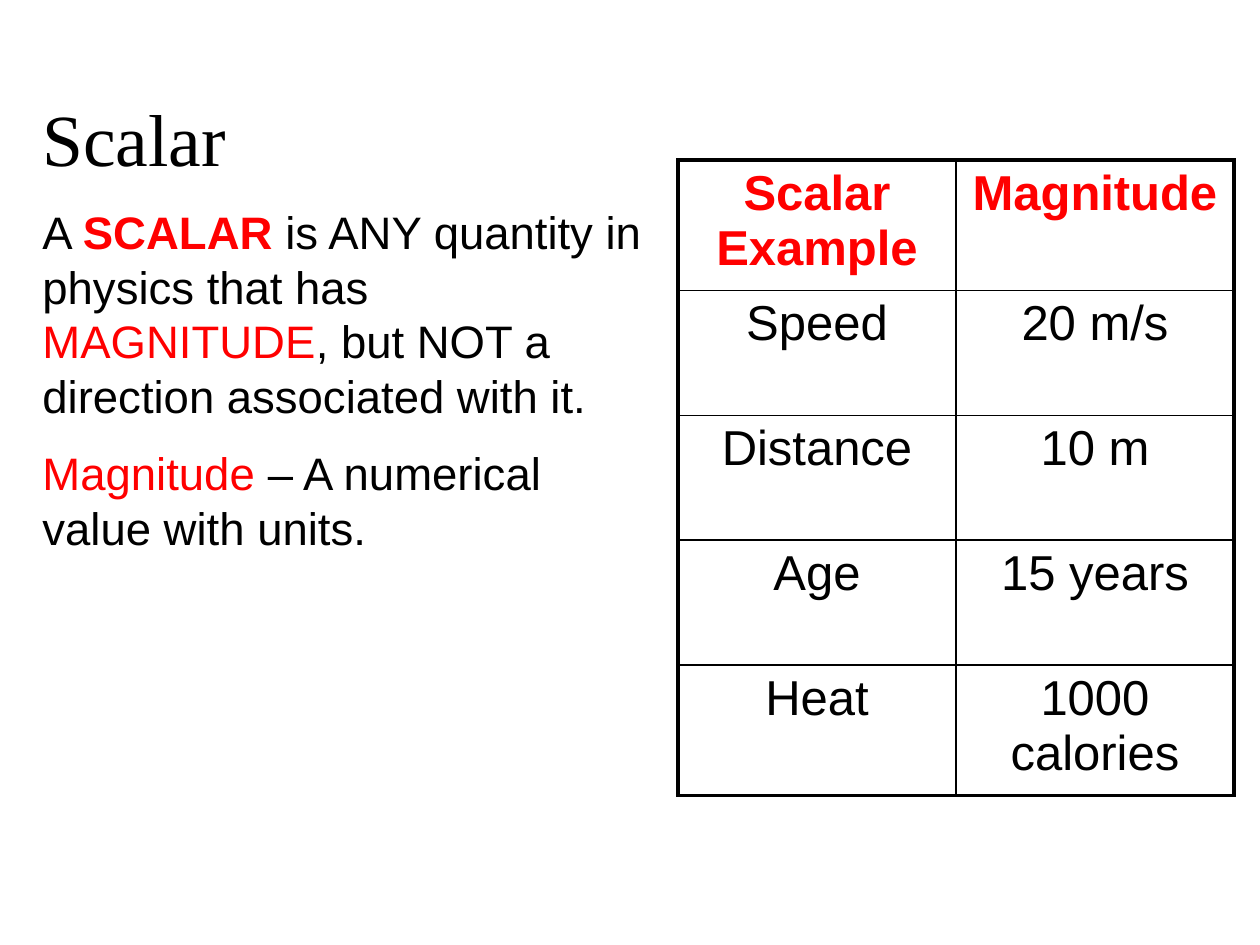
from pptx import Presentation
from pptx.dml.color import RGBColor
from pptx.enum.text import PP_ALIGN
from pptx.oxml import parse_xml
from pptx.oxml.ns import nsdecls
from pptx.util import Emu, Pt

PX = 914400 // 126

THEME = {
    "ink": "000000",
    "accent": "FF0000",
    "heading_font": "Times New Roman",
    "body_font": "Arial",
    "heading": 42,
    "body": 26,
    "cell": 28,
    "paragraph_gap": 13,
    "thick": 2.25,
    "thin": 1,
}

HEADING = "Scalar"
# Each run: text, colour, bold
DEFINITIONS = [
    [("A ", "ink", False), ("SCALAR", "accent", True),
     (" is ANY quantity in physics that has ", "ink", False),
     ("MAGNITUDE", "accent", False),
     (", but NOT a direction associated with it.", "ink", False)],
    [("Magnitude", "accent", False),
     (" – A numerical value with units.", "ink", False)],
]
EXAMPLES = [
    ("Scalar Example", "Magnitude"),
    ("Speed", "20 m/s"),
    ("Distance", "10 m"),
    ("Age", "15 years"),
    ("Heat", "1000 calories"),
]
TEXT_BOX = (30, 87, 628, 484)
TABLE_LEFT, TABLE_TOP, COLUMN_WIDTH = 678, 160, 278
ROW_HEIGHTS = [130, 125, 125, 125, 130]


def px(n):
    return Emu(n * PX)


def format_run(r, font, size, color="ink", bold=False):
    r.font.name = THEME[font]
    r.font.size = Pt(THEME[size])
    r.font.bold = bold
    r.font.color.rgb = RGBColor.from_string(THEME[color])


def set_borders(cell, outer):
    """Draw all four sides, thick on the sides named in outer."""
    tc_pr = cell._tc.get_or_add_tcPr()
    for i, side in enumerate("LRTB"):
        width = Pt(THEME["thick" if side in outer else "thin"])
        tc_pr.insert(i, parse_xml(
            f'<a:ln{side} {nsdecls("a")} w="{width}"><a:solidFill>'
            f'<a:srgbClr val="{THEME["ink"]}"/></a:solidFill></a:ln{side}>'))


def add_definitions(s):
    tf = s.shapes.add_textbox(*map(px, TEXT_BOX)).text_frame
    tf.word_wrap = True
    p = tf.paragraphs[0]
    p.text = HEADING
    format_run(p.runs[0], "heading_font", "heading")
    for runs in DEFINITIONS:
        p = tf.add_paragraph()
        p.space_before = Pt(THEME["paragraph_gap"])
        for text, color, bold in runs:
            r = p.add_run()
            r.text = text
            format_run(r, "body_font", "body", color, bold)


def add_examples(s):
    rows, cols = len(EXAMPLES), len(EXAMPLES[0])
    table = s.shapes.add_table(
        rows, cols, px(TABLE_LEFT), px(TABLE_TOP),
        px(COLUMN_WIDTH * cols), px(sum(ROW_HEIGHTS))).table
    table.first_row = table.horz_banding = False
    for column in table.columns:
        column.width = px(COLUMN_WIDTH)
    for i, (values, height) in enumerate(zip(EXAMPLES, ROW_HEIGHTS)):
        table.rows[i].height = px(height)
        for j, value in enumerate(values):
            cell = table.cell(i, j)
            cell.margin_left = cell.margin_right = 0
            cell.fill.background()
            outer = "L" if j == 0 else "R"
            if i == 0:
                outer += "T"
            if i == rows - 1:
                outer += "B"
            set_borders(cell, outer)
            p = cell.text_frame.paragraphs[0]
            p.text = value
            p.alignment = PP_ALIGN.CENTER
            format_run(p.runs[0], "body_font", "cell",
                       "accent" if i == 0 else "ink", i == 0)


def main():
    prs = Presentation()
    prs.slide_width, prs.slide_height = px(1260), px(945)
    s = prs.slides.add_slide(prs.slide_layouts[6])
    add_definitions(s)
    add_examples(s)
    prs.save("out.pptx")


if __name__ == "__main__":
    main()
